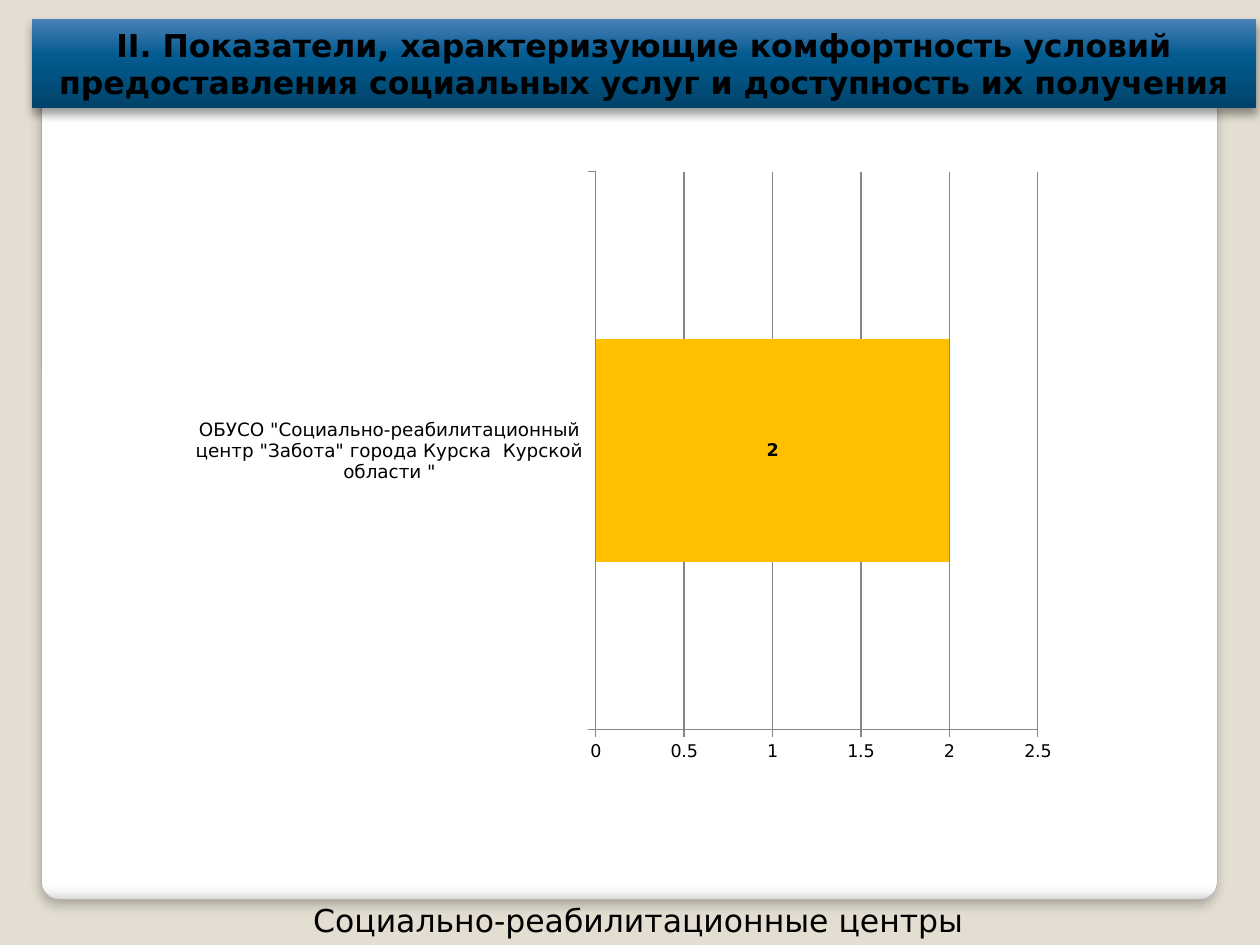
from lxml import etree
from pptx import Presentation
from pptx.chart.data import CategoryChartData
from pptx.dml.color import RGBColor
from pptx.enum.chart import XL_CHART_TYPE, XL_LABEL_POSITION, XL_TICK_MARK
from pptx.enum.shapes import MSO_SHAPE
from pptx.enum.text import MSO_ANCHOR, PP_ALIGN
from pptx.oxml import parse_xml
from pptx.oxml.ns import nsdecls, qn
from pptx.util import Cm, Pt

BAR_STACKED = XL_CHART_TYPE.BAR_STACKED
LABEL_CENTER = XL_LABEL_POSITION.CENTER
TICK_OUTSIDE = XL_TICK_MARK.OUTSIDE
TICK_NONE = XL_TICK_MARK.NONE
RECTANGLE = MSO_SHAPE.RECTANGLE
ROUNDED = MSO_SHAPE.ROUNDED_RECTANGLE
MIDDLE = MSO_ANCHOR.MIDDLE
CENTER = PP_ALIGN.CENTER

FONT = "DejaVu Sans"
BLACK = "000000"
GRID = "868686"
TITLE = ("II. Показатели, характеризующие комфортность условий "
         "предоставления социальных услуг и доступность их получения")
CAPTION = "Социально-реабилитационные центры"
CENTERS = [('ОБУСО "Социально-реабилитационный центр "Забота" '
            'города Курска  Курской области "', 2)]

PANEL_BOX = (0.84, 0.91, 23.7, 17.22)
TITLE_BOX = (0.64, 0.38, 24.69, 1.8)
CAPTION_BOX = (0.64, 18.03, 24.46, 1.02)
CHART_BOX = (3.45, 3.25, 18.49, 12.52)
PLOT_LAYOUT = {"x": 0.463, "y": 0.017, "w": 0.482, "h": 0.898}

PANEL_STOPS = [(0, "FFFFFF"), (98, "FFFFFF"), (99, "F7F7F7"), (100, "DADADA")]
TITLE_STOPS = [(0, "00436A"), (60, "035C91"), (100, "4A80B7")]


def color(value):
    return RGBColor.from_string(value)


def place(box):
    return [Cm(length) for length in box]


def set_gradient(shape, stops, angle):
    shape.fill.gradient()
    shape.fill.gradient_angle = angle
    old_stops = shape.element.spPr.find(qn("a:gradFill")).find(qn("a:gsLst"))
    items = "".join(
        f'<a:gs pos="{position * 1000}"><a:srgbClr val="{value}"/></a:gs>'
        for position, value in stops)
    new_stops = parse_xml(f'<a:gsLst {nsdecls("a")}>{items}</a:gsLst>')
    old_stops.getparent().replace(old_stops, new_stops)


def set_shadow(shape, opacity, blur, distance):
    shape.shadow.inherit = False
    effects = shape.element.spPr.find(qn("a:effectLst"))
    effects.append(parse_xml(
        f'<a:outerShdw {nsdecls("a")} blurRad="{Pt(blur)}" dist="{Pt(distance)}" '
        f'dir="5400000" rotWithShape="0"><a:srgbClr val="{BLACK}">'
        f'<a:alpha val="{opacity * 1000}"/></a:srgbClr></a:outerShdw>'))


def set_text(shape, text, bold):
    frame = shape.text_frame
    frame.word_wrap = True
    frame.vertical_anchor = MIDDLE
    paragraph = frame.paragraphs[0]
    paragraph.text = text
    paragraph.alignment = CENTER
    set_font(paragraph.font, 18, bold)


def set_font(font, size, bold=False):
    font.name = FONT
    font.size = Pt(size)
    font.bold = bold
    font.color.rgb = color(BLACK)


def set_plot_layout(chart):
    plot_area = chart.element.chart.plotArea
    for old_layout in plot_area.findall(qn("c:layout")):
        plot_area.remove(old_layout)
    layout = etree.Element(qn("c:layout"))
    manual = etree.SubElement(layout, qn("c:manualLayout"))
    settings = {"layoutTarget": "inner", "xMode": "edge", "yMode": "edge", **PLOT_LAYOUT}
    for name, value in settings.items():
        etree.SubElement(manual, qn(f"c:{name}")).set("val", str(value))
    plot_area.insert(0, layout)


def add_center_chart(slide):
    data = CategoryChartData()
    data.categories = [name for name, value in CENTERS]
    data.add_series("Series 1", [value for name, value in CENTERS])
    chart = slide.shapes.add_chart(BAR_STACKED, *place(CHART_BOX), data).chart
    chart.has_title = False
    chart.has_legend = False
    set_font(chart.font, 10)

    for axis, size in ((chart.category_axis, 10.5), (chart.value_axis, 10)):
        axis.major_tick_mark = TICK_OUTSIDE
        axis.minor_tick_mark = TICK_NONE
        axis.format.line.color.rgb = color(GRID)
        set_font(axis.tick_labels.font, size)
    value_axis = chart.value_axis
    value_axis.minimum_scale = 0
    value_axis.maximum_scale = 2.5
    value_axis.major_unit = 0.5
    value_axis.has_major_gridlines = True
    value_axis.major_gridlines.format.line.color.rgb = color(GRID)

    plot = chart.plots[0]
    plot.gap_width = 150
    plot.overlap = 100
    plot.vary_by_categories = False
    series = plot.series[0]
    series.format.fill.solid()
    series.format.fill.fore_color.rgb = color("FFC000")
    labels = series.data_labels
    labels.show_value = True
    labels.position = LABEL_CENTER
    set_font(labels.font, 10, True)
    set_plot_layout(chart)


def main():
    presentation = Presentation()
    presentation.slide_width = Cm(25.4)
    presentation.slide_height = Cm(19.05)
    slide = presentation.slides.add_slide(presentation.slide_layouts[6])
    slide.background.fill.solid()
    slide.background.fill.fore_color.rgb = color("E3DED1")

    panel = slide.shapes.add_shape(ROUNDED, *place(PANEL_BOX))
    panel.adjustments[0] = 0.021
    set_gradient(panel, PANEL_STOPS, 270)
    panel.line.color.rgb = color("A4A4A4")
    panel.line.width = Pt(0.16)
    set_shadow(panel, 25, 6, 4)

    banner = slide.shapes.add_shape(RECTANGLE, *place(TITLE_BOX))
    set_gradient(banner, TITLE_STOPS, 90)
    banner.line.fill.background()
    set_shadow(banner, 40, 5.2, 3)
    set_text(banner, TITLE, True)

    caption = slide.shapes.add_textbox(*place(CAPTION_BOX))
    set_text(caption, CAPTION, False)

    add_center_chart(slide)
    presentation.save("out.pptx")


if __name__ == "__main__":
    main()
